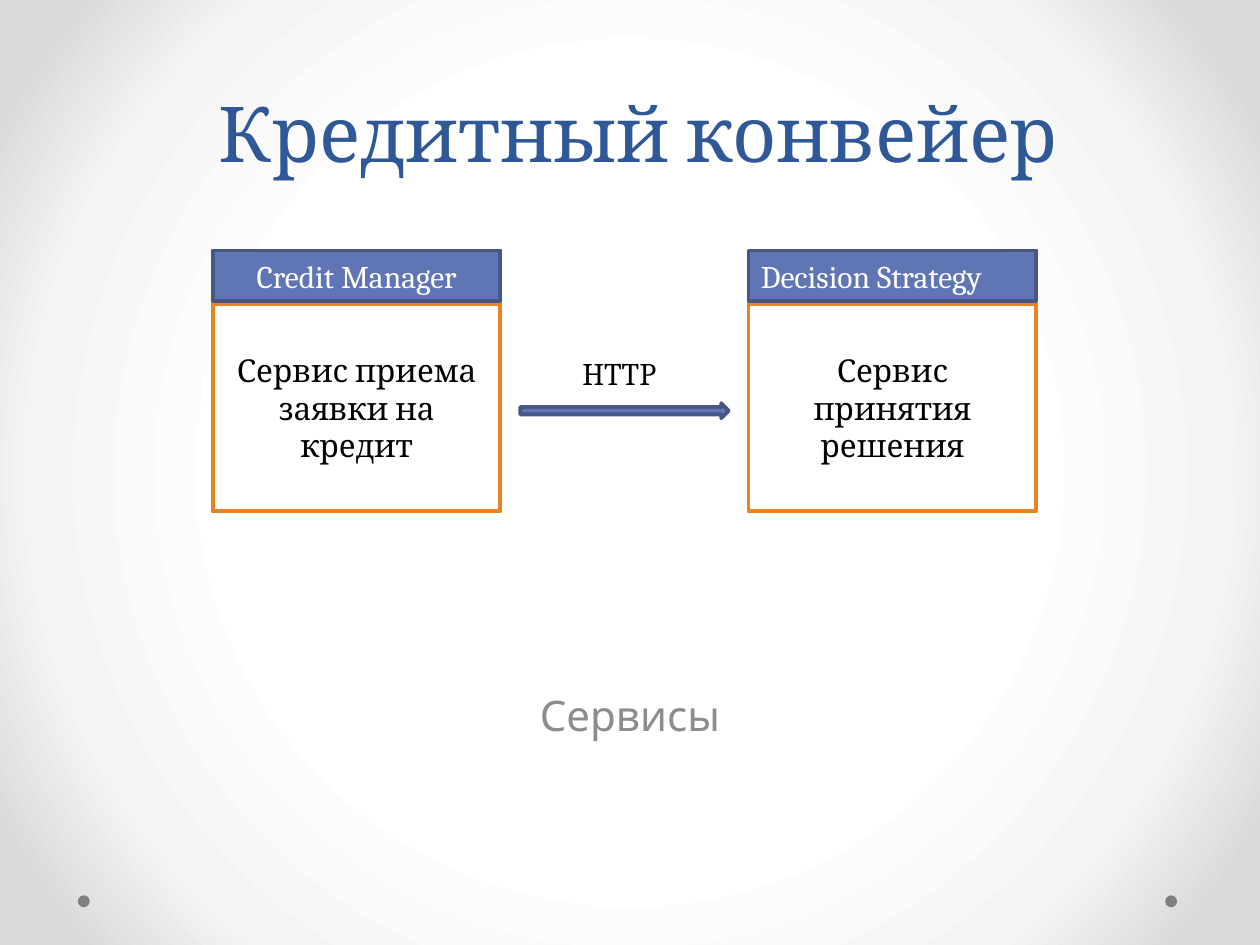
from lxml import etree
from pptx import Presentation
from pptx.dml.color import RGBColor
from pptx.enum.shapes import MSO_SHAPE as SHAPE
from pptx.enum.text import MSO_ANCHOR as ANCHOR, PP_ALIGN as ALIGN
from pptx.oxml.ns import qn
from pptx.util import Cm, Pt

COLORS = {
    "title": "2F5897", "subtitle": "8C8C8C", "dot": "808080",
    "blue": "6076B4", "navy": "475785", "orange": "E68422",
    "white": "FFFFFF", "black": "000000", "pale": "F4F4F4", "gray": "DADADA",
}


def rgb(name):
    return RGBColor.from_string(COLORS[name])


def set_background(s, stops):
    s.background.fill.gradient()
    grad = s.element.find(".//" + qn("a:gradFill"))
    for child in list(grad):
        grad.remove(child)
    gs_list = etree.SubElement(grad, qn("a:gsLst"))
    for percent, color in stops:
        gs = etree.SubElement(gs_list, qn("a:gs"), pos=str(percent * 1000))
        etree.SubElement(gs, qn("a:srgbClr"), val=COLORS[color])
    circle = etree.SubElement(grad, qn("a:path"), path="circle")
    etree.SubElement(circle, qn("a:fillToRect"), l="50000", t="50000", r="50000", b="50000")


def write(sp, text, size, color, font="Cambria", align=ALIGN.CENTER,
          anchor=ANCHOR.TOP, wrap=True):
    tf = sp.text_frame
    tf.word_wrap = wrap
    tf.vertical_anchor = anchor
    tf.text = text
    p = tf.paragraphs[0]
    p.alignment = align
    p.font.size = Pt(size)
    p.font.name = font
    p.font.color.rgb = rgb(color)
    return p


def add_text(s, x, y, w, h, text, size, color, **style):
    sp = s.shapes.add_textbox(Cm(x), Cm(y), Cm(w), Cm(h))
    return write(sp, text, size, color, **style)


def add_shape(s, kind, x, y, w, h, fill, line=None):
    sp = s.shapes.add_shape(kind, Cm(x), Cm(y), Cm(w), Cm(h))
    sp.shadow.inherit = False
    sp.fill.solid()
    sp.fill.fore_color.rgb = rgb(fill)
    if line:
        sp.line.color.rgb = rgb(line)
        sp.line.width = Pt(2.25)
    else:
        sp.line.fill.background()
    return sp


def add_service(s, x, y, w, h, name, role, name_align):
    header_h, body_top = 1.02, 1.07
    body = add_shape(s, SHAPE.RECTANGLE, x, y + body_top, w, h - body_top, "white", "orange")
    write(body, role, 18, "black", anchor=ANCHOR.MIDDLE)
    header = add_shape(s, SHAPE.RECTANGLE, x, y, w, header_h, "blue", "navy")
    write(header, name, 18, "white", align=name_align)


def add_link(s, x, y, w, h, label):
    arrow_h, label_w = 0.3, 2.2
    add_shape(s, SHAPE.RIGHT_ARROW, x, y + h - arrow_h, w, arrow_h, "blue", "navy")
    add_text(s, x + (w - label_w) / 2, y, label_w, 1.02, label, 18, "black",
             align=ALIGN.LEFT, wrap=False)


def add_corner_dots(s, x, y, w, size):
    for left in (x, x + w - size):
        add_shape(s, SHAPE.OVAL, left, y, size, size, "dot")


def main():
    prs = Presentation()
    prs.slide_width, prs.slide_height = Cm(25.4), Cm(19.05)
    s = prs.slides.add_slide(prs.slide_layouts[6])
    set_background(s, [(50, "white"), (76, "pale"), (92, "gray")])
    add_corner_dots(s, 1.57, 18.05, 22.16, 0.24)
    add_text(s, 2.9, 0.91, 19.94, 2.8, "Кредитный конвейер", 44, "title", anchor=ANCHOR.BOTTOM)
    subtitle = add_text(s, 3.81, 13.77, 17.78, 3.38, "Сервисы", 24, "subtitle", font="Quicksand")
    subtitle.space_before = Pt(4.8)
    add_service(s, 4.29, 5.05, 5.8, 5.26, "Credit Manager",
                "Сервис приема\vзаявки на кредит", ALIGN.CENTER)
    add_service(s, 15.09, 5.05, 5.8, 5.26, "Decision Strategy",
                "Сервис принятия\vрешения", ALIGN.LEFT)
    add_link(s, 10.49, 7.01, 4.2, 1.42, "HTTP")
    prs.save("out.pptx")


if __name__ == "__main__":
    main()
